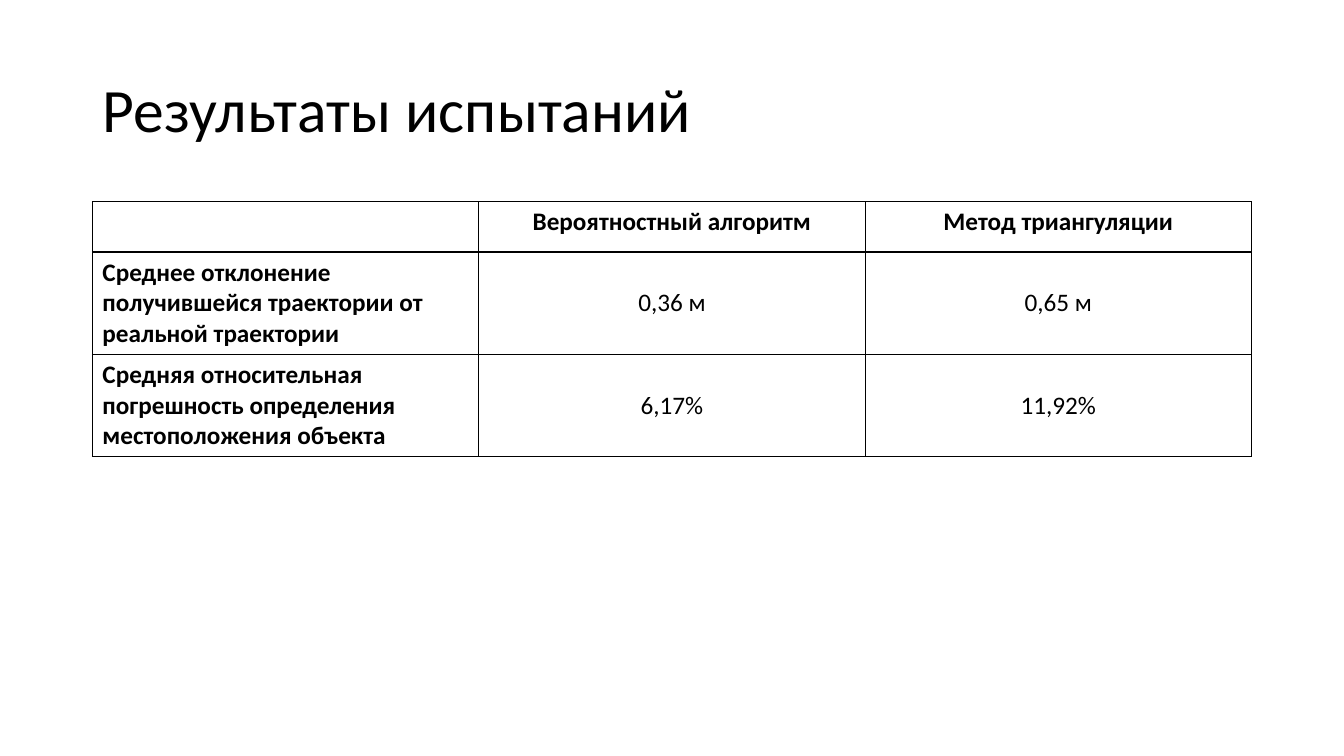
from dataclasses import dataclass

from lxml import etree
from pptx import Presentation
from pptx.dml.color import RGBColor
from pptx.enum import text
from pptx.oxml import ns
from pptx.util import Emu, Pt

EMU_PER_PX = 9525
FONT = "Calibri"
BLACK = RGBColor(0, 0, 0)
BORDER_PT = 1


@dataclass(frozen=True)
class Box:
    left: int
    top: int
    width: int
    height: int


@dataclass(frozen=True)
class Entry:
    words: str
    bold: bool = False
    align: text.PP_ALIGN = text.PP_ALIGN.CENTER
    anchor: text.MSO_ANCHOR = text.MSO_ANCHOR.MIDDLE


def px(n: int) -> Emu:
    return Emu(n * EMU_PER_PX)


def header(words: str) -> Entry:
    return Entry(words, bold=True, anchor=text.MSO_ANCHOR.TOP)


def label(words: str) -> Entry:
    return Entry(words, bold=True, align=text.PP_ALIGN.LEFT, anchor=text.MSO_ANCHOR.TOP)


TITLE_BOX = Box(88, 38, 1104, 139)
TABLE_BOX = Box(88, 192, 1104, 242)
ROW_HEIGHTS = (48, 97, 97)
RESULTS = (
    (header(""), header("Вероятностный алгоритм"), header("Метод триангуляции")),
    (label("Среднее отклонение получившейся траектории от реальной траектории"),
     Entry("0,36 м"), Entry("0,65 м")),
    (label("Средняя относительная погрешность определения местоположения объекта"),
     Entry("6,17%"), Entry("11,92%")),
)


def add_run(p, words: str, size: int, bold: bool = False) -> None:
    r = p.add_run()
    r.text = words
    r.font.name, r.font.size, r.font.bold = FONT, Pt(size), bold
    r.font.color.rgb = BLACK


def set_borders(cell) -> None:
    tc_pr = cell._tc.get_or_add_tcPr()
    for i, side in enumerate(("lnL", "lnR", "lnT", "lnB")):
        ln = etree.Element(ns.qn(f"a:{side}"), w=str(Pt(BORDER_PT)))
        fill = etree.SubElement(ln, ns.qn("a:solidFill"))
        etree.SubElement(fill, ns.qn("a:srgbClr"), val=str(BLACK))
        tc_pr.insert(i, ln)


def fill_cell(cell, entry: Entry) -> None:
    cell.fill.background()
    set_borders(cell)
    cell.vertical_anchor = entry.anchor
    p = cell.text_frame.paragraphs[0]
    p.alignment = entry.align
    if entry.words:
        add_run(p, entry.words, 18, entry.bold)


def add_title(slide, box: Box, words: str) -> None:
    sp = slide.shapes.title
    sp.left, sp.top = px(box.left), px(box.top)
    sp.width, sp.height = px(box.width), px(box.height)
    tf = sp.text_frame
    tf.vertical_anchor = text.MSO_ANCHOR.MIDDLE
    p = tf.paragraphs[0]
    p.alignment, p.line_spacing = text.PP_ALIGN.LEFT, 0.9
    add_run(p, words, 44)


def add_results(slide, box: Box) -> None:
    table = slide.shapes.add_table(
        len(RESULTS), len(RESULTS[0]),
        px(box.left), px(box.top), px(box.width), px(box.height)).table
    table.first_row = table.horz_banding = False
    for row, height, entries in zip(table.rows, ROW_HEIGHTS, RESULTS):
        row.height = px(height)
        for cell, entry in zip(row.cells, entries):
            fill_cell(cell, entry)


def main() -> None:
    prs = Presentation()
    prs.slide_width, prs.slide_height = px(1280), px(720)
    slide = prs.slides.add_slide(prs.slide_layouts[5])

    # Heading
    add_title(slide, TITLE_BOX, "Результаты испытаний")

    # Comparison of the two methods
    add_results(slide, TABLE_BOX)

    prs.save("out.pptx")


if __name__ == "__main__":
    main()
